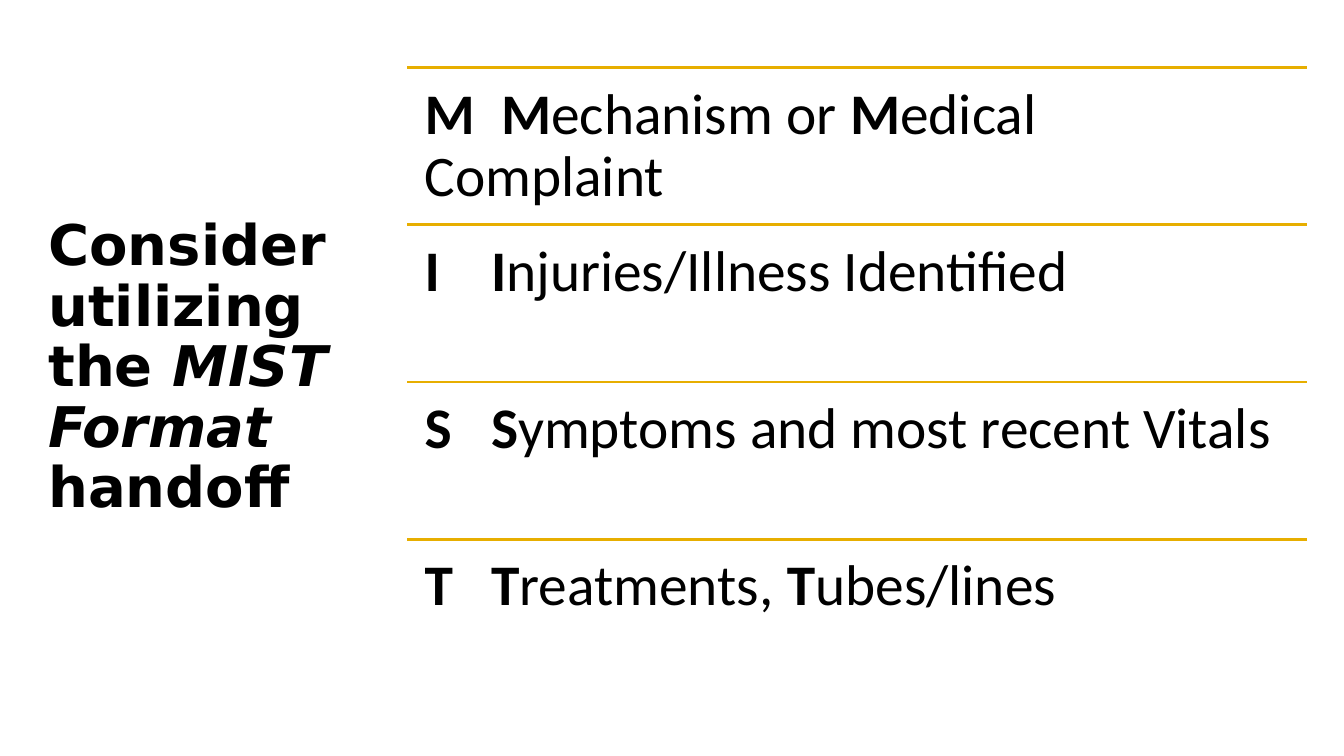
import pptx
import pptx.util
import pptx.dml.color
import pptx.enum.shapes
import pptx.enum.text
import lxml.etree

Inches, Pt = pptx.util.Inches, pptx.util.Pt
COLORS = {"text": "000000", "rule": "E7AE00"}
TITLE = [("Consider utilizing the ", False), ("MIST Format ", True), ("handoff", False)]
ROWS = [
    (0.76, [("M\tM", True), ("echanism or ", False), ("M", True), ("edical Complaint", False)]),
    (0.66, [("I\tI", True), ("njuries/Illness Identified", False)]),
    (0.66, [("S\tS", True), ("ymptoms and most recent Vitals", False)]),
    (0.66, [("T\tT", True), ("reatments, ", False), ("T", True), ("ubes/lines", False)]),
]
LEFT, TOP, WIDTH, ROW_HEIGHT, INSET = 4.04, 0.67, 8.92, 1.56, 0.17


def rgb(name):
    return pptx.dml.color.RGBColor.from_string(COLORS[name])


def add_run(p, text, font, size, bold, italic=False):
    r = p.add_run()
    r.text = text
    r.font.name = font
    r.font.size = Pt(size)
    r.font.bold = bold
    r.font.italic = italic
    r.font.color.rgb = rgb("text")


def add_tab_stop(p, position):
    tabs = lxml.etree.SubElement(p._p.get_or_add_pPr(), pptx.oxml.ns.qn("a:tabLst"))
    lxml.etree.SubElement(tabs, pptx.oxml.ns.qn("a:tab"), pos=str(Inches(position)), algn="l")


def add_title(s):
    sp = s.shapes.title
    sp.left, sp.top, sp.width, sp.height = Inches(0.38), Inches(0.61), Inches(3.69), Inches(6.09)
    tf = sp.text_frame
    tf.word_wrap = True
    tf.auto_size = pptx.enum.text.MSO_AUTO_SIZE.NONE
    tf.vertical_anchor = pptx.enum.text.MSO_ANCHOR.MIDDLE
    p = tf.paragraphs[0]
    p.alignment = pptx.enum.text.PP_ALIGN.LEFT
    p.line_spacing = 0.9
    for text, italic in TITLE:
        add_run(p, text, "DejaVu Sans", 40, True, italic)


def add_rule(s, y):
    line = s.shapes.add_connector(pptx.enum.shapes.MSO_CONNECTOR.STRAIGHT,
                                  Inches(LEFT), Inches(y), Inches(LEFT + WIDTH), Inches(y))
    line.line.color.rgb = rgb("rule")
    line.line.width = Pt(2)
    lxml.etree.SubElement(line._element.spPr, pptx.oxml.ns.qn("a:effectLst"))


def add_row(s, y, tab, runs):
    sp = s.shapes.add_textbox(Inches(LEFT), Inches(y), Inches(WIDTH), Inches(ROW_HEIGHT))
    tf = sp.text_frame
    tf.word_wrap = True
    tf.margin_left = tf.margin_top = tf.margin_right = tf.margin_bottom = Inches(INSET)
    p = tf.paragraphs[0]
    add_tab_stop(p, tab)
    p.line_spacing = 0.9
    for text, bold in runs:
        add_run(p, text, "Calibri", 41, bold)


def main():
    prs = pptx.Presentation()
    prs.slide_width, prs.slide_height = Inches(13.33), Inches(7.5)
    s = prs.slides.add_slide(prs.slide_layouts[5])
    add_title(s)
    for i, (tab, runs) in enumerate(ROWS):
        y = TOP + i * ROW_HEIGHT
        add_rule(s, y)
        add_row(s, y, tab, runs)
    prs.save("out.pptx")


if __name__ == "__main__":
    main()
